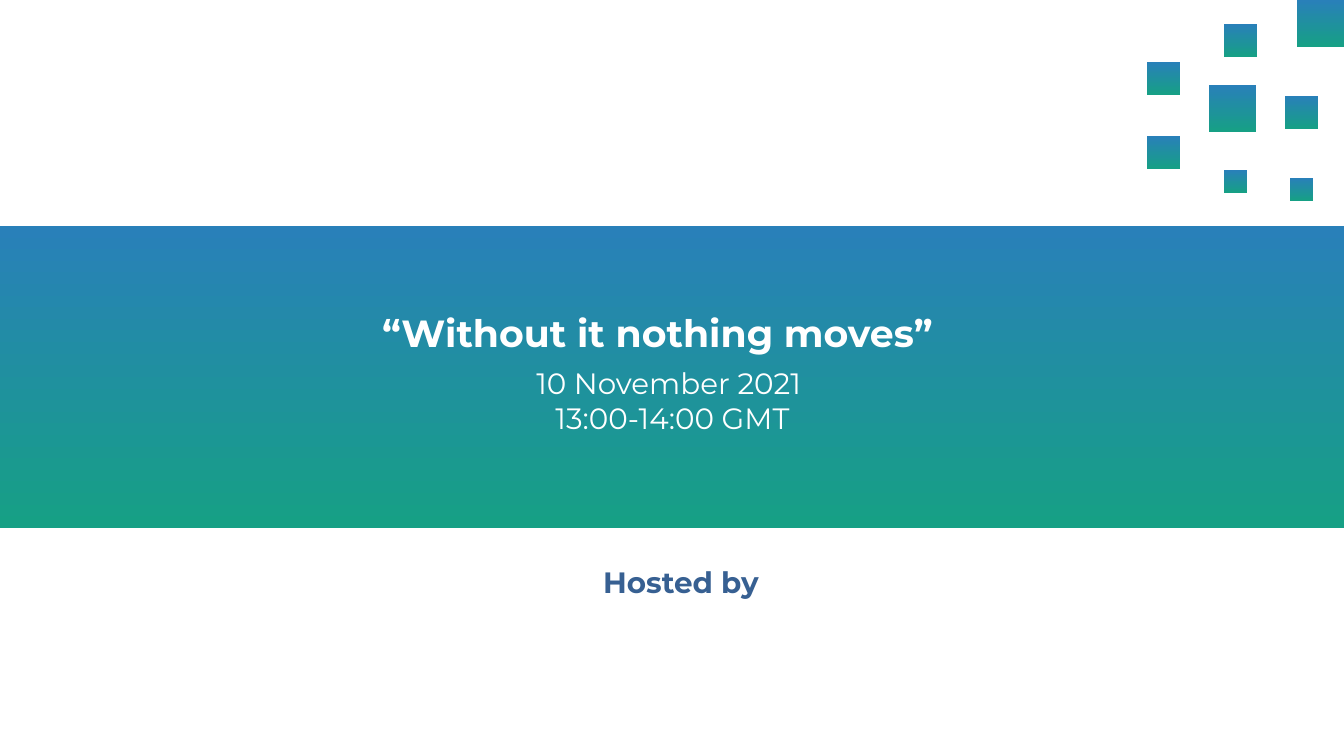
from dataclasses import dataclass

from pptx import Presentation
from pptx.dml.color import RGBColor
from pptx.enum.shapes import MSO_SHAPE as Shape
from pptx.enum.text import MSO_ANCHOR as Anchor, MSO_AUTO_SIZE as AutoSize, PP_ALIGN as Align
from pptx.util import Emu, Pt

EMU_PER_PX = 914400 / 100.8
TITLE_ONLY = 5


@dataclass(frozen=True)
class Theme:
    font: str = "Montserrat"
    blue: str = "2980B9"
    green: str = "16A085"
    navy: str = "376092"
    white: str = "FFFFFF"
    title_size: int = 27
    body_size: int = 21


def px(length):
    return Emu(round(length * EMU_PER_PX))


class EventSlide:
    def __init__(self, slide, theme):
        self.slide, self.theme = slide, theme

    def rectangle(self, *box):
        rect = self.slide.shapes.add_shape(Shape.RECTANGLE, *map(px, box))
        rect.shadow.inherit = False
        return rect

    def gradient_block(self, *box):
        block = self.rectangle(*box)
        block.line.fill.background()
        block.fill.gradient()
        block.fill.gradient_angle = 270
        colors = (self.theme.blue, self.theme.green)
        for position, (stop, color) in enumerate(zip(block.fill.gradient_stops, colors)):
            stop.position = position
            stop.color.rgb = RGBColor.from_string(color)

    def set_text(self, shape, text, size, color, bold=False, anchor=Anchor.TOP, inset=5):
        frame = shape.text_frame
        frame.text = text
        frame.word_wrap = True
        frame.auto_size = AutoSize.NONE
        frame.vertical_anchor = anchor
        frame.margin_left = frame.margin_right = px(10)
        frame.margin_top = frame.margin_bottom = px(inset)
        for paragraph in frame.paragraphs:
            paragraph.alignment = Align.CENTER
            paragraph.line_spacing = 1.0
            for run in paragraph.runs:
                run.font.name = self.theme.font
                run.font.size = Pt(size)
                run.font.bold = bold
                run.font.color.rgb = RGBColor.from_string(color)

    def title(self, text, *box):
        heading = self.slide.shapes.title
        heading.left, heading.top, heading.width, heading.height = map(px, box)
        # Bring the heading in front of the band
        self.slide.shapes._spTree.append(heading._element)
        self.set_text(heading, text, self.theme.title_size, self.theme.white, bold=True)

    def text(self, text, *box):
        schedule = self.slide.shapes.add_textbox(*map(px, box))
        self.set_text(schedule, text, self.theme.body_size, self.theme.white)

    def label(self, text, *box):
        host = self.rectangle(*box)
        host.fill.background()
        host.line.color.rgb = RGBColor.from_string(self.theme.white)
        host.line.width = Pt(0.75)
        self.set_text(host, text, self.theme.body_size, self.theme.navy,
                      bold=True, anchor=Anchor.MIDDLE, inset=10)


def main():
    deck = Presentation()
    deck.slide_width, deck.slide_height = px(1344), px(756)
    event = EventSlide(deck.slides.add_slide(deck.slide_layouts[TITLE_ONLY]), Theme())

    # Central band with the event title and time
    event.gradient_block(0, 226, 1344, 302)
    event.title("“Without it nothing moves”", 69, 305, 1177, 56)
    event.text("10 November 2021 \n13:00-14:00 GMT", 231, 360, 883, 82)

    # Scattered squares in the top right corner, grouped by side
    large, medium, small = 47, 33, 23
    squares = {
        large: [(1297, 0), (1209, 85)],
        medium: [(1224, 24), (1285, 96), (1147, 62), (1147, 136)],
        small: [(1224, 170), (1290, 178)],
    }
    for side, corners in squares.items():
        for left, top in corners:
            event.gradient_block(left, top, side, side)

    # Host line below the band
    event.label("Hosted by", 539, 554, 284, 56)

    deck.save("out.pptx")


if __name__ == "__main__":
    main()
